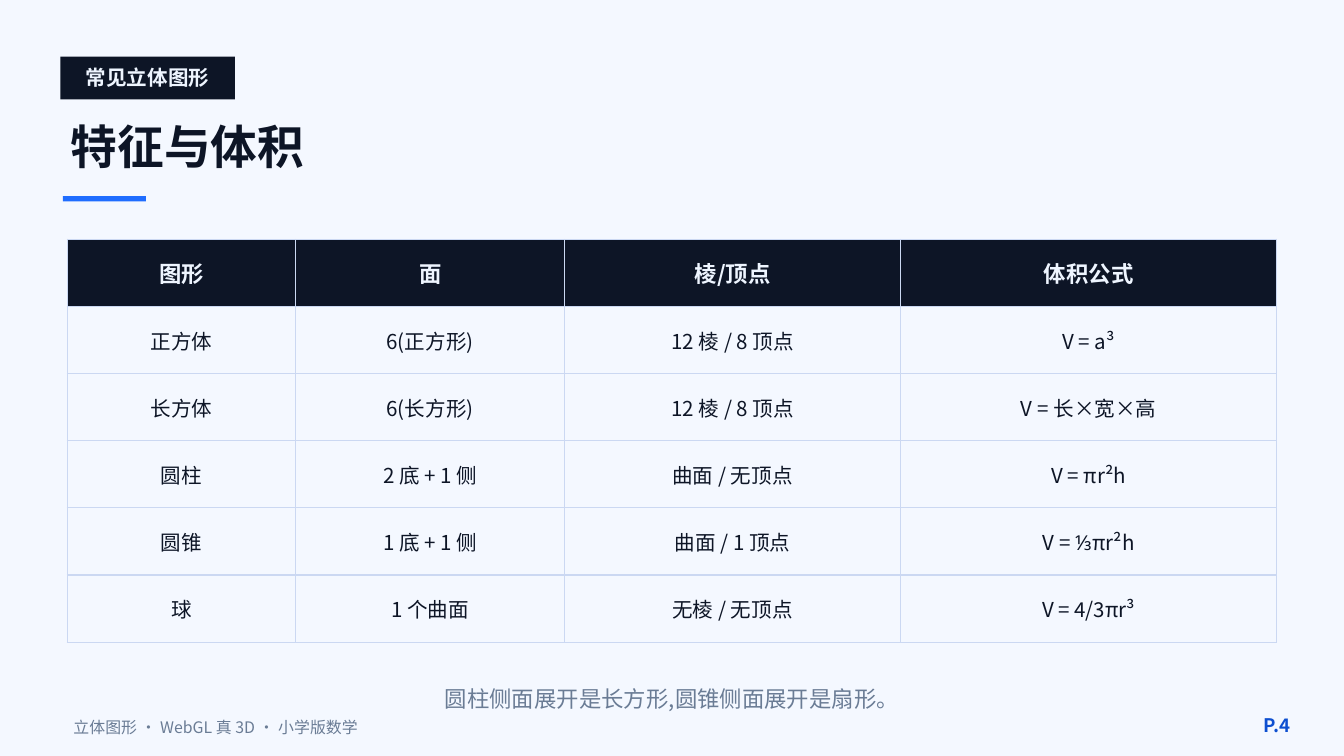
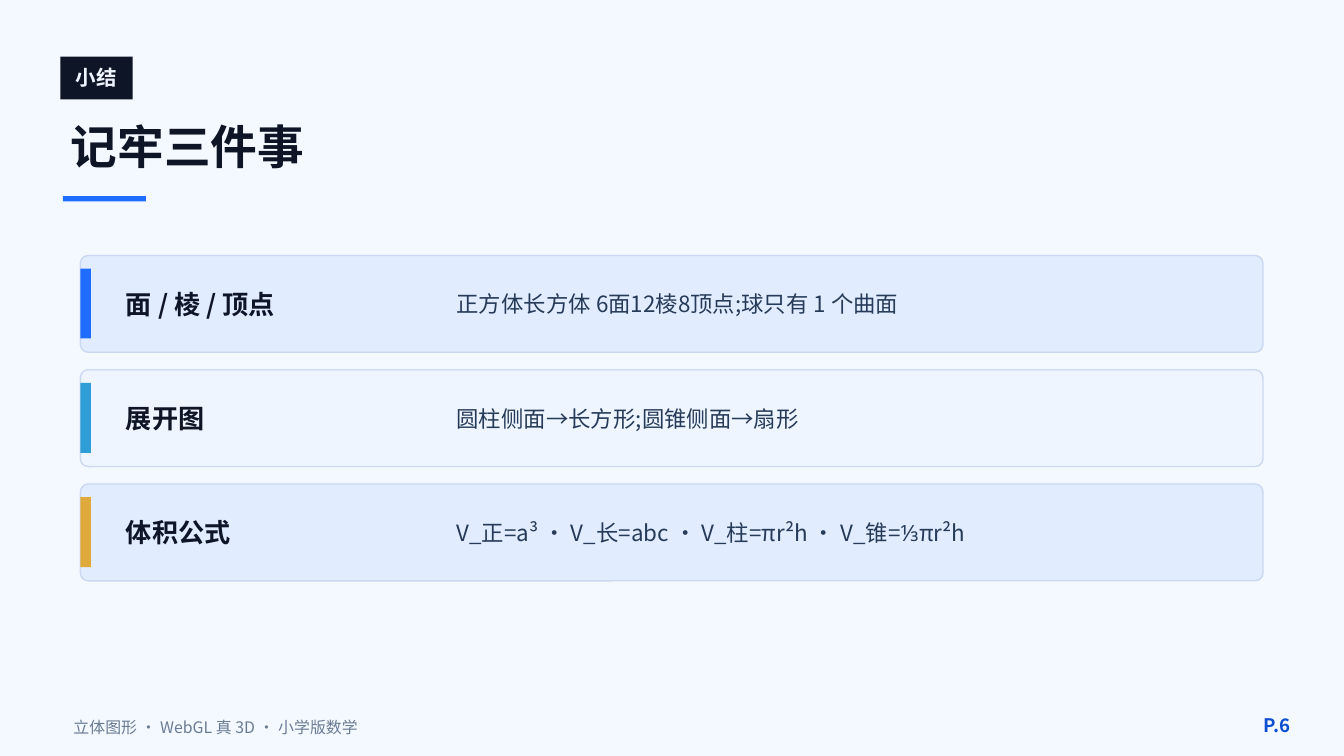
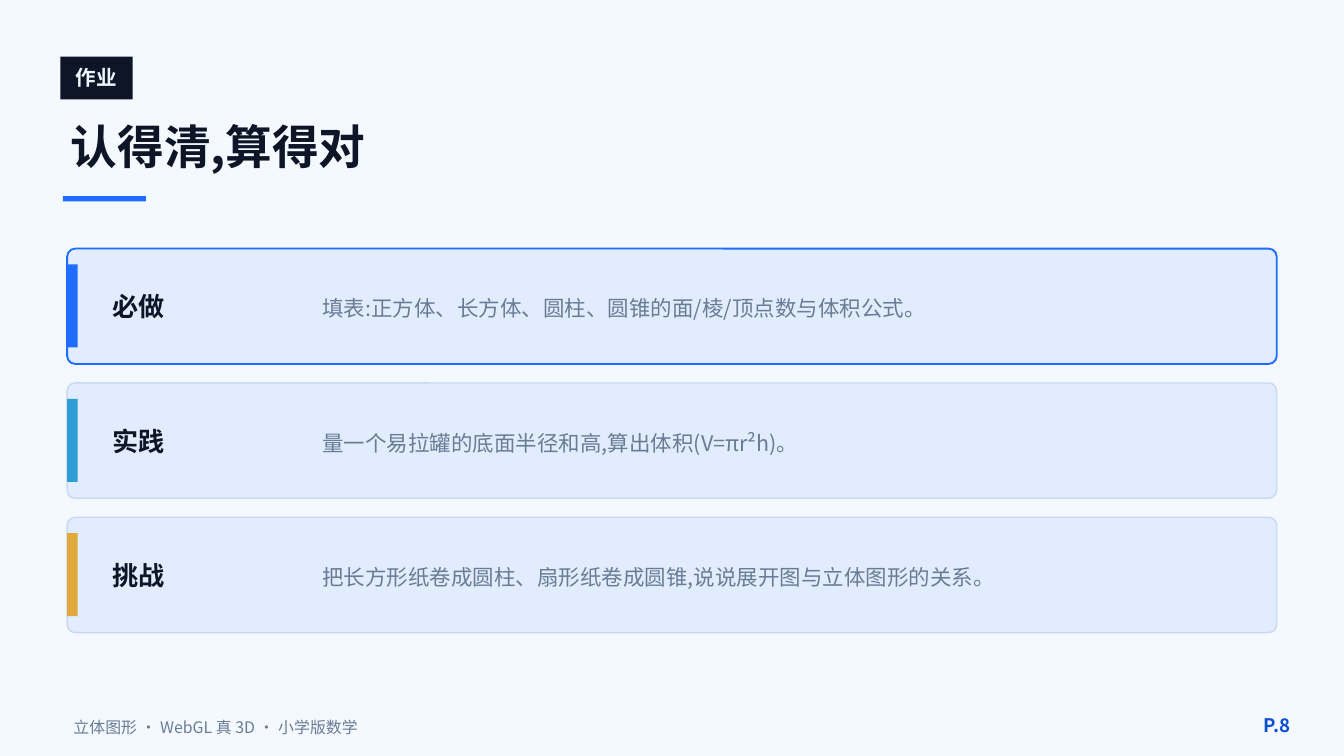
from lxml.etree import SubElement
from pptx import Presentation
from pptx.dml.color import RGBColor
from pptx.enum.shapes import MSO_SHAPE
from pptx.enum.text import MSO_ANCHOR, PP_ALIGN
from pptx.oxml.ns import qn
from pptx.util import Cm, Pt

FONT = "Noto Sans CJK SC"
HUES = {
    "page": "F4F8FF",
    "ink": "0D1526",
    "pale": "EEF5FF",
    "card": "E1ECFE",
    "rule": "CBD8F2",
    "blue": "1F6DFF",
    "deep": "0D4FD0",
    "sky": "2F9ED6",
    "gold": "E0A93C",
    "body": "263B59",
    "mute": "6A7C95",
}
RGB = {name: RGBColor.from_string(code) for name, code in HUES.items()}
LEFT, MID, RIGHT = PP_ALIGN.LEFT, PP_ALIGN.CENTER, PP_ALIGN.RIGHT
RECT, ROUND = MSO_SHAPE.RECTANGLE, MSO_SHAPE.ROUNDED_RECTANGLE


def draw(page, kind, at, fill, line=None, width=0.75):
    shape = page.shapes.add_shape(kind, *map(Cm, at))
    shape.shadow.inherit = False
    shape.fill.solid()
    shape.fill.fore_color.rgb = RGB[fill]
    if line:
        shape.line.color.rgb = RGB[line]
        shape.line.width = Pt(width)
    else:
        shape.line.fill.background()
    return shape


def write(host, at, words, size, hue, bold=False, align=LEFT):
    if at:
        host = host.shapes.add_textbox(*map(Cm, at))
        host.text_frame.word_wrap = True
        host.text_frame.vertical_anchor = MSO_ANCHOR.MIDDLE
    para = host.text_frame.paragraphs[0]
    para.text = words
    para.alignment = align
    font = para.font
    font.name, font.size, font.bold = FONT, Pt(size), bold
    font.color.rgb = RGB[hue]
    SubElement(para._p.pPr.find(qn("a:defRPr")), qn("a:ea"), typeface=FONT)
    return para


deck = Presentation()
deck.slide_width, deck.slide_height = Cm(25.4), Cm(14.29)

pages = []
for tag, wide, title, number in [
    ("常见立体图形", 3.3, "特征与体积", 4),
    ("小结", 1.37, "记牢三件事", 6),
    ("作业", 1.37, "认得清,算得对", 8),
]:
    page = deck.slides.add_slide(deck.slide_layouts[6])
    page.background.fill.solid()
    page.background.fill.fore_color.rgb = RGB["page"]
    draw(page, RECT, (1.14, 1.07, wide, 0.81), "ink")
    write(page, (1.14, 1.04, wide, 0.86), tag, 11, "pale", True, MID)
    write(page, (1.09, 1.98, 22.86, 1.57), title, 25, "ink", True)
    draw(page, RECT, (1.19, 3.71, 1.57, 0.1), "blue")
    write(page, (1.14, 13.36, 16.51, 0.76), "立体图形 · WebGL 真 3D · 小学版数学", 8.5, "mute")
    write(page, (23.11, 13.31, 1.52, 0.81), f"P.{number}", 10, "deep", True, RIGHT)
    pages.append(page)
solids, recap, tasks = pages

rows = [
    ("图形", "面", "棱/顶点", "体积公式"),
    ("正方体", "6(正方形)", "12 棱 / 8 顶点", "V = a³"),
    ("长方体", "6(长方形)", "12 棱 / 8 顶点", "V = 长×宽×高"),
    ("圆柱", "2 底 + 1 侧", "曲面 / 无顶点", "V = πr²h"),
    ("圆锥", "1 底 + 1 侧", "曲面 / 1 顶点", "V = ⅓πr²h"),
    ("球", "1 个曲面", "无棱 / 无顶点", "V = 4/3πr³"),
]
grid = solids.shapes.add_table(6, 4, Cm(1.27), Cm(4.52), Cm(22.86), Cm(7.62)).table
for col, wide in zip(grid.columns, (4.32, 5.08, 6.35, 7.11)):
    col.width = Cm(wide)
for r, row in enumerate(rows):
    head = r == 0
    for c, words in enumerate(row):
        cell = grid.cell(r, c)
        cell.vertical_anchor = MSO_ANCHOR.MIDDLE
        write(cell, None, words, 12 if head else 11, "pale" if head else "ink", head, MID)
        for side in ("a:lnL", "a:lnR", "a:lnT", "a:lnB"):
            edge = SubElement(cell._tc.get_or_add_tcPr(), qn(side), w=str(Pt(0.75)))
            fill = SubElement(edge, qn("a:solidFill"))
            SubElement(fill, qn("a:srgbClr"), val=HUES["rule"])
        cell.fill.solid()
        cell.fill.fore_color.rgb = RGB["ink" if head else "page"]
write(solids, (1.27, 12.7, 22.86, 1.02), "圆柱侧面展开是长方形,圆锥侧面展开是扇形。", 12, "mute", align=MID)

accents = ("blue", "sky", "gold")

points = [
    ("面 / 棱 / 顶点", "正方体长方体 6面12棱8顶点;球只有 1 个曲面", "card"),
    ("展开图", "圆柱侧面→长方形;圆锥侧面→扇形", "pale"),
    ("体积公式", "V_正=a³ · V_长=abc · V_柱=πr²h · V_锥=⅓πr²h", "card"),
]
for i, (name, words, fill) in enumerate(points):
    top = 4.83 + 2.16 * i
    card = draw(recap, ROUND, (1.52, top, 22.35, 1.83), fill, "rule")
    card.adjustments[0] = 0.08
    draw(recap, RECT, (1.52, top + 0.25, 0.2, 1.32), accents[i])
    write(recap, (2.13, top, 6.1, 1.83), name, 14, "ink", True)
    write(recap, (8.38, top, 14.99, 1.83), words, 12, "body")

works = [
    ("必做", "填表:正方体、长方体、圆柱、圆锥的面/棱/顶点数与体积公式。", "blue", 1),
    ("实践", "量一个易拉罐的底面半径和高,算出体积(V=πr²h)。", "rule", 0.75),
    ("挑战", "把长方形纸卷成圆柱、扇形纸卷成圆锥,说说展开图与立体图形的关系。", "rule", 0.75),
]
for i, (name, words, line, width) in enumerate(works):
    top = 4.7 + 2.54 * i
    card = draw(tasks, ROUND, (1.27, top, 22.86, 2.18), "card", line, width)
    card.adjustments[0] = 0.07
    draw(tasks, RECT, (1.27, top + 0.3, 0.2, 1.57), accents[i])
    write(tasks, (1.88, top + 0.25, 3.56, 1.68), name, 14, "ink", True)
    note = write(tasks, (5.84, top + 0.2, 17.78, 1.78), words, 11.5, "mute")
    note.line_spacing = Pt(16)

deck.save("out.pptx")
